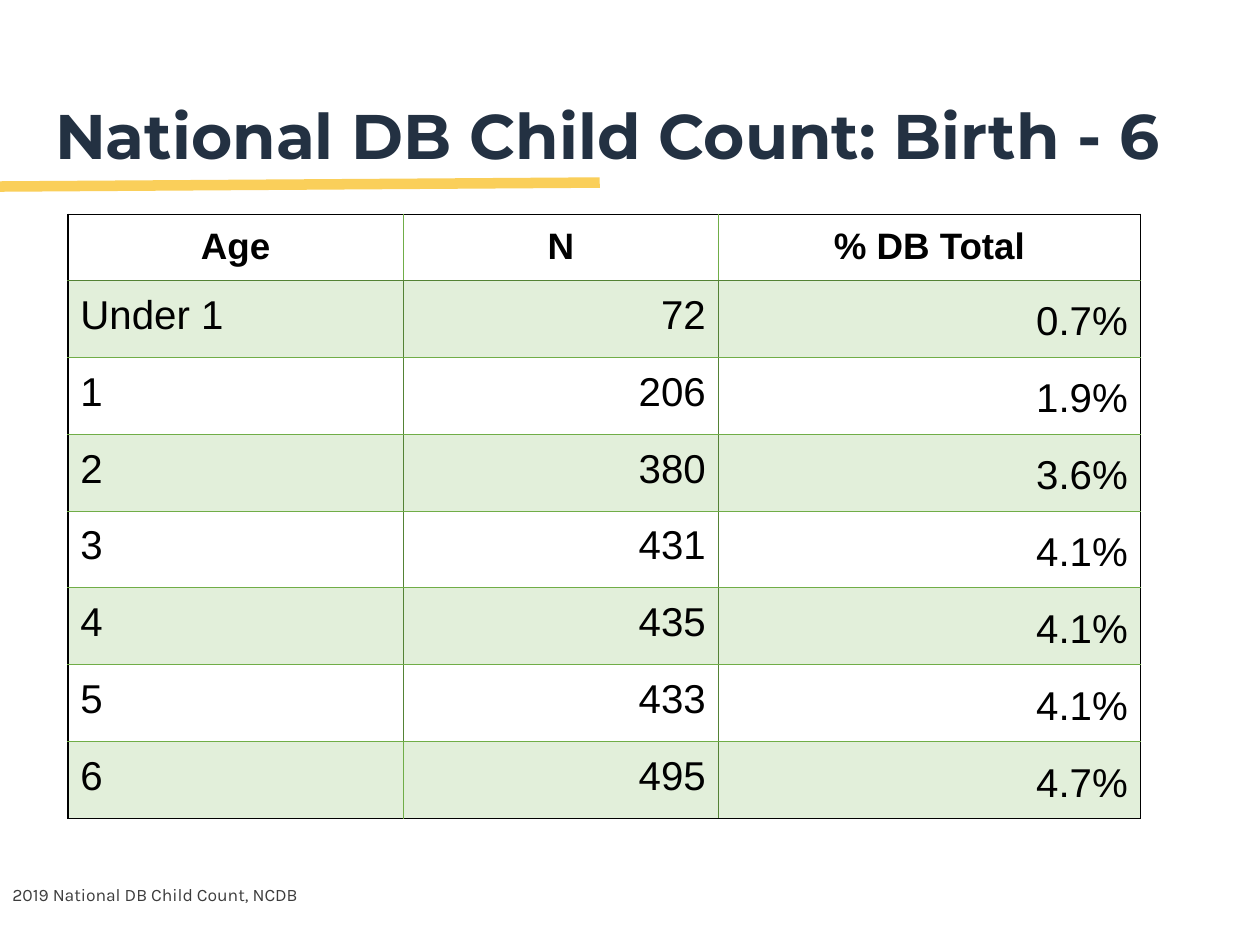
from lxml import etree
from pptx import Presentation
from pptx import util as u
from pptx.dml.color import RGBColor
from pptx.enum import shapes, text
from pptx.oxml import ns

COLORS = {
    "navy": "233142",
    "yellow": "FACF5A",
    "black": "000000",
    "gray": "3C3C3C",
    "band": "E2EFDA",
    "green": "70AD47",
    "dark_green": "548235",
}
MARGIN = u.Cm(0.25)
COLUMN_WIDTHS = [6.76, 6.35, 8.51]
HEADER_HEIGHT, ROW_HEIGHT = 1.33, 1.55
ROWS = [
    ("Age", "N", "% DB Total"),
    ("Under 1", "72", "0.7%"),
    ("1", "206", "1.9%"),
    ("2", "380", "3.6%"),
    ("3", "431", "4.1%"),
    ("4", "435", "4.1%"),
    ("5", "433", "4.1%"),
    ("6", "495", "4.7%"),
]


def color(name):
    return RGBColor.from_string(COLORS[name])


def set_margins(target):
    target.margin_left = target.margin_right = MARGIN
    target.margin_top = target.margin_bottom = MARGIN


def write(text_frame, content, font_name, size, color_name, bold=False):
    text_frame.text = content
    paragraph = text_frame.paragraphs[0]
    font = paragraph.runs[0].font
    font.name, font.size, font.bold = font_name, u.Pt(size), bold
    font.color.rgb = color(color_name)
    return paragraph


def add_title(slide, content):
    title = slide.shapes.title
    title.left, title.top = u.Cm(0.86), u.Cm(1.65)
    title.width, title.height = u.Cm(23.67), u.Cm(2.11)
    frame = title.text_frame
    set_margins(frame)
    frame.word_wrap = True
    frame.auto_size = text.MSO_AUTO_SIZE.NONE
    frame.vertical_anchor = text.MSO_ANCHOR.MIDDLE
    paragraph = write(frame, content, "Montserrat", 36, "navy", True)
    paragraph.alignment = text.PP_ALIGN.LEFT


def add_underline(slide):
    line = slide.shapes.add_connector(
        shapes.MSO_CONNECTOR.STRAIGHT, 0, u.Cm(3.76), u.Cm(12.09), u.Cm(3.68))
    line.line.color.rgb = color("yellow")
    line.line.width = u.Pt(6)
    etree.SubElement(line._element.spPr, ns.qn("a:effectLst"))


def set_border(cell, side, color_name):
    width = u.Pt(1 if color_name == "black" else 0.59)
    properties = cell._tc.get_or_add_tcPr()
    border = etree.SubElement(properties, ns.qn(f"a:ln{side}"), w=str(int(width)))
    fill = etree.SubElement(border, ns.qn("a:solidFill"))
    etree.SubElement(fill, ns.qn("a:srgbClr"), val=COLORS[color_name])


def column_edge(row, edge):
    """Colour of the vertical rule at a column edge."""
    if edge in (0, len(COLUMN_WIDTHS)):
        return "black"
    lighter = row == 0 or (row == len(ROWS) - 1 and edge == 1)
    return "green" if lighter else "dark_green"


def row_edge(edge):
    """Colour of the horizontal rule at a row edge."""
    if edge in (0, len(ROWS)):
        return "black"
    return "dark_green" if edge == 1 else "green"


def format_cell(cell, row, column, content):
    set_margins(cell)
    header = row == 0
    paragraph = write(cell.text_frame, content, "Arial",
                      21 if header else 23, "black", header)
    if header:
        paragraph.alignment = text.PP_ALIGN.CENTER
    else:
        paragraph.alignment = text.PP_ALIGN.RIGHT if column else text.PP_ALIGN.LEFT
        if column == 2:
            paragraph.line_spacing = 1.15

    # Borders come before the fill in the cell properties
    set_border(cell, "L", column_edge(row, column))
    set_border(cell, "R", column_edge(row, column + 1))
    set_border(cell, "T", row_edge(row))
    set_border(cell, "B", row_edge(row + 1))
    if row % 2:
        cell.fill.solid()
        cell.fill.fore_color.rgb = color("band")
    else:
        cell.fill.background()


def add_count_table(slide):
    height = HEADER_HEIGHT + ROW_HEIGHT * (len(ROWS) - 1)
    table = slide.shapes.add_table(
        len(ROWS), len(COLUMN_WIDTHS), u.Cm(1.37), u.Cm(4.32),
        u.Cm(sum(COLUMN_WIDTHS)), u.Cm(height)).table
    for column, width in zip(table.columns, COLUMN_WIDTHS):
        column.width = u.Cm(width)
    for row, values in enumerate(ROWS):
        table.rows[row].height = u.Cm(ROW_HEIGHT if row else HEADER_HEIGHT)
        for column, content in enumerate(values):
            format_cell(table.cell(row, column), row, column, content)


def add_source_note(slide, content):
    box = slide.shapes.add_textbox(0, u.Cm(17.6), u.Cm(8.33), u.Cm(1.02))
    frame = box.text_frame
    frame.word_wrap = True
    set_margins(frame)
    write(frame, content, "Karla", 10, "gray")


def main():
    presentation = Presentation()
    presentation.slide_width, presentation.slide_height = u.Cm(25.4), u.Cm(19.05)
    slide = presentation.slides.add_slide(presentation.slide_layouts[5])

    # Heading
    add_underline(slide)
    add_title(slide, "National DB Child Count: Birth - 6")

    # Counts by age
    add_count_table(slide)

    # Source
    add_source_note(slide, "2019 National DB Child Count, NCDB")
    presentation.save("out.pptx")


if __name__ == "__main__":
    main()
